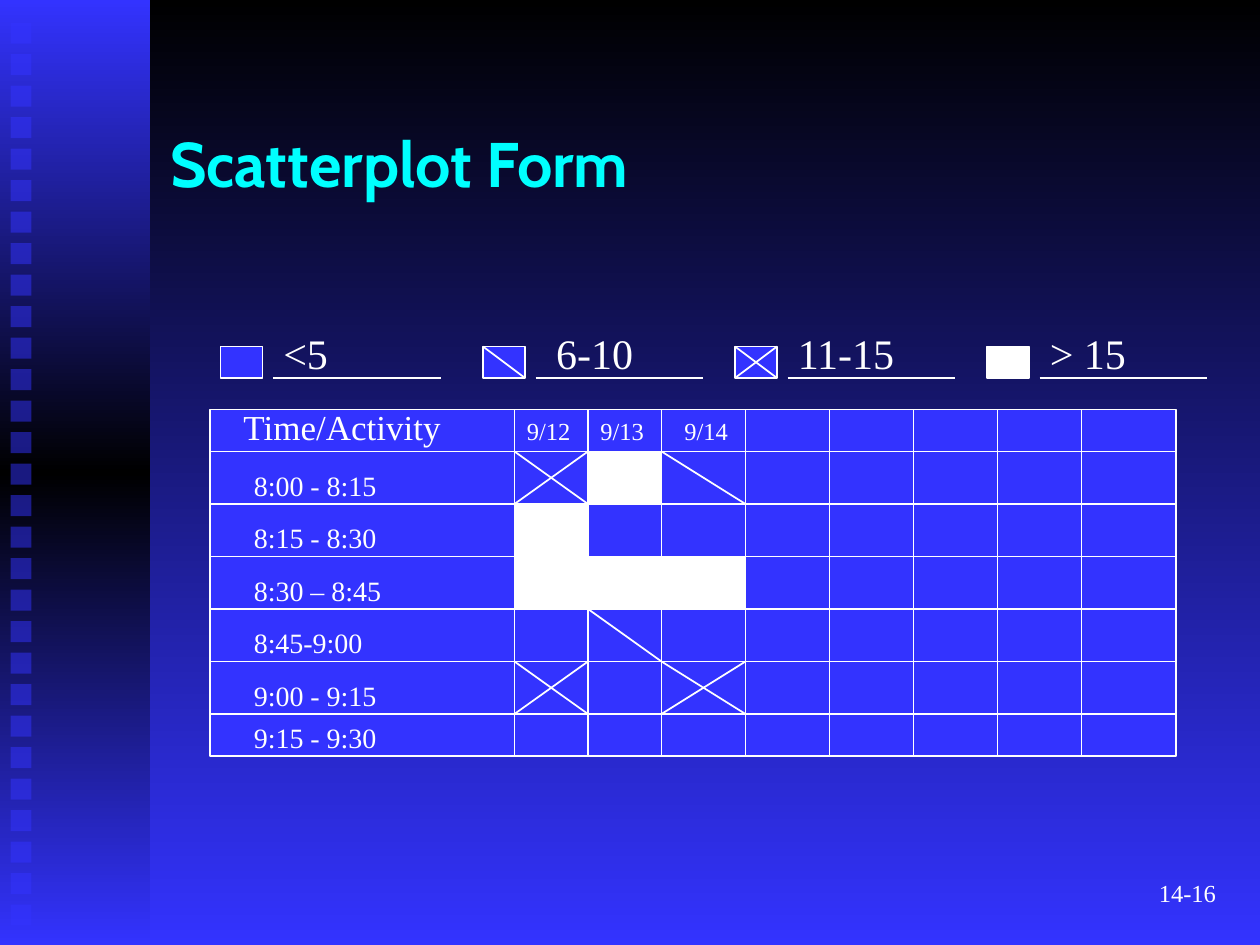
import copy

import lxml.etree
import pptx
import pptx.dml.color
import pptx.enum.shapes
import pptx.enum.text
import pptx.oxml.ns
import pptx.util

RGBColor = pptx.dml.color.RGBColor
BLACK = RGBColor(0x00, 0x00, 0x00)
BLUE = RGBColor(0x33, 0x33, 0xFF)
WHITE = RGBColor(0xFF, 0xFF, 0xFF)
CYAN = RGBColor(0x00, 0xFF, 0xFF)

Anchor = pptx.enum.text.MSO_ANCHOR
Align = pptx.enum.text.PP_ALIGN
qn = pptx.oxml.ns.qn

# The slide is a grid of 120 columns and 90 rows, twelve to the inch.
CELLS_PER_INCH = 12
SLIDE_COLUMNS, SLIDE_ROWS = 120, 90

FORM_COLUMNS = [20, 49, 56, 63, 71, 79, 87, 95, 103, 112]
FORM_ROWS = [39, 43, 48, 53, 58, 63, 68, 72]

# Text, left column
DATES = [("9/12", 49), ("9/13", 56), ("9/14", 64)]
# Text, top row, width in columns
TIMES = [
    ("8:00 - 8:15", 44, 14.3),
    ("8:15 - 8:30", 49, 14.3),
    ("8:30 – 8:45", 54, 14.8),
    ("8:45-9:00", 59, 13),
    ("9:00 - 9:15", 64, 14.3),
    ("9:15 - 9:30", 68, 14.3),
]
# Text, box column, text column, text width, mark
LEGEND = [
    ("<5", 21, 25.8, 6.7, "empty"),
    ("6-10", 46, 51.8, 9.8, "slash"),
    ("11-15", 70, 74.8, 11.8, "cross"),
    ("> 15", 94, 98.8, 9.7, "full"),
]
# (form row, form column): mark
MARKS = {
    (1, 1): "cross", (1, 2): "full", (1, 3): "slash",
    (2, 1): "full",
    (3, 1): "full", (3, 2): "full", (3, 3): "full",
    (4, 2): "slash",
    (5, 1): "cross", (5, 3): "cross",
}


def grid(cells):
    return pptx.util.Inches(cells / CELLS_PER_INCH)


def write_text(frame, text, size=16, font="Times New Roman", color=WHITE,
               bold=False, align=Align.LEFT, anchor=Anchor.TOP):
    frame.vertical_anchor = anchor
    paragraph = frame.paragraphs[0]
    paragraph.alignment = align
    run = paragraph.add_run()
    run.text = text
    run.font.size = pptx.util.Pt(size)
    run.font.name = font
    run.font.bold = bold
    run.font.color.rgb = color


def fill_downwards(fill, element, colors):
    """Fill with evenly spaced colours from top to bottom."""
    fill.gradient()
    fill.gradient_angle = 270
    stop_list = element.find(".//" + qn("a:gsLst"))
    for _ in colors[2:]:
        stop_list.append(copy.deepcopy(stop_list[-1]))
    for index, (stop, color) in enumerate(zip(fill.gradient_stops, colors)):
        stop.position = index / (len(colors) - 1)
        stop.color.rgb = color


class FormSlide:
    """Holds the slide and the line style; lengths are grid cells."""

    def __init__(self, slide, line_color=WHITE, line_width=1):
        self.slide = slide
        self.line_color = line_color
        self.line_width = pptx.util.Pt(line_width)

    def background(self, colors):
        fill_downwards(self.slide.background.fill, self.slide.element, colors)

    def title(self, text, left, top, width, height):
        shape = self.slide.shapes.title
        shape.left, shape.top = grid(left), grid(top)
        shape.width, shape.height = grid(width), grid(height)
        write_text(shape.text_frame, text, size=36, font="Cabin", color=CYAN,
                   bold=True, anchor=Anchor.MIDDLE)

    def rectangle(self, left, top, width, height, color=None, outlined=True):
        shape = self.slide.shapes.add_shape(
            pptx.enum.shapes.MSO_SHAPE.RECTANGLE,
            grid(left), grid(top), grid(width), grid(height))
        shape.shadow.inherit = False
        if color is not None:
            shape.fill.solid()
            shape.fill.fore_color.rgb = color
        if outlined:
            shape.line.color.rgb = self.line_color
            shape.line.width = self.line_width
        else:
            shape.line.fill.background()
        return shape

    def line(self, start_column, start_row, end_column, end_row):
        connector = self.slide.shapes.add_connector(
            pptx.enum.shapes.MSO_CONNECTOR.STRAIGHT,
            grid(start_column), grid(start_row), grid(end_column), grid(end_row))
        connector.line.color.rgb = self.line_color
        connector.line.width = self.line_width
        lxml.etree.SubElement(connector.element.spPr, qn("a:effectLst"))

    def label(self, text, left, top, width, height, wrap=False, **text_format):
        box = self.slide.shapes.add_textbox(
            grid(left), grid(top), grid(width), grid(height))
        frame = box.text_frame
        frame.word_wrap = wrap
        if not wrap:
            frame.auto_size = pptx.enum.text.MSO_AUTO_SIZE.SHAPE_TO_FIT_TEXT
        write_text(frame, text, **text_format)

    def mark(self, kind, left, top, right, bottom):
        if kind == "full":
            self.rectangle(left, top, right - left, bottom - top, WHITE)
        if kind in ("slash", "cross"):
            self.line(left, top, right, bottom)
        if kind == "cross":
            self.line(left, bottom, right, top)

    def sidebar(self):
        band = self.rectangle(0, 0, 14.3, SLIDE_ROWS, outlined=False)
        fill_downwards(band.fill, band.element, [BLUE, BLACK, BLUE])
        for index in range(29):
            square = self.rectangle(1, 2.15 + 3 * index, 2, 2, BLUE, outlined=False)
            color_element = square.element.spPr.find(".//" + qn("a:srgbClr"))
            lxml.etree.SubElement(color_element, qn("a:alpha"), val="50000")

    def legend(self):
        for text, box_left, text_left, text_width, kind in LEGEND:
            if kind != "full":
                self.rectangle(box_left, 33, 4, 3, BLUE)
            self.mark(kind, box_left, 33, box_left + 4, 36)
            self.line(box_left + 5, 36, box_left + 21, 36)
            self.label(text, text_left, 30.6, text_width, 6.1, size=24)

    def form(self):
        left, right = FORM_COLUMNS[0], FORM_COLUMNS[-1]
        top, bottom = FORM_ROWS[0], FORM_ROWS[-1]
        self.rectangle(left, top, right - left, bottom - top, BLUE)
        for column in FORM_COLUMNS[1:-1]:
            self.line(column, top, column, bottom)
        for row in FORM_ROWS[1:-1]:
            self.line(left, row, right, row)
        for (row, column), kind in MARKS.items():
            self.mark(kind, FORM_COLUMNS[column], FORM_ROWS[row],
                      FORM_COLUMNS[column + 1], FORM_ROWS[row + 1])
        self.label("Time/Activity", 22, 38, 21.2, 5.2, size=20)
        for text, date_left in DATES:
            self.label(text, date_left, 39, 6.6, 4, size=14)
        for text, time_top, width in TIMES:
            self.label(text, 23, time_top, width, 4.4)


def main():
    presentation = pptx.Presentation()
    presentation.slide_width = grid(SLIDE_COLUMNS)
    presentation.slide_height = grid(SLIDE_ROWS)
    title_only = presentation.slide_layouts[5]
    page = FormSlide(presentation.slides.add_slide(title_only))
    page.background([BLACK, BLUE])
    page.sidebar()
    page.title("Scatterplot Form", 15, 8, 102, 15)
    page.form()
    page.legend()
    page.label("14-16", 92, 82, 25, 6, wrap=True, size=14,
               align=Align.RIGHT, anchor=Anchor.MIDDLE)
    presentation.save("out.pptx")


if __name__ == "__main__":
    main()
